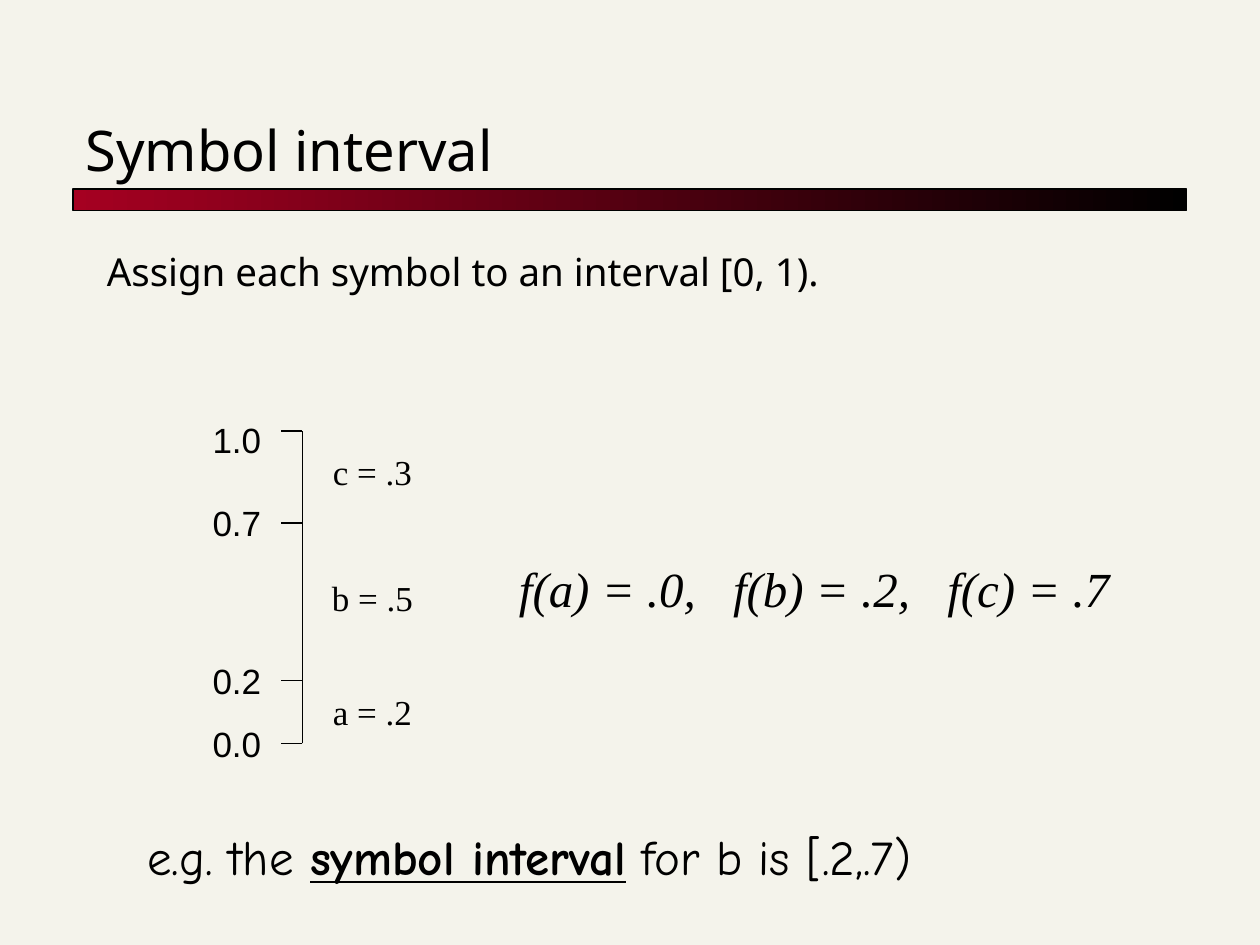
"""Build the symbol interval slide with its probability scale."""
from dataclasses import dataclass

from lxml.etree import SubElement
from pptx import Presentation
from pptx.dml.color import RGBColor
from pptx.enum.shapes import MSO_CONNECTOR, MSO_SHAPE
from pptx.enum.text import MSO_ANCHOR as Anchor, PP_ALIGN as Align
from pptx.oxml.ns import qn
from pptx.slide import Slide
from pptx.text.text import _Paragraph as Paragraph
from pptx.util import Inches, Pt

CREAM = RGBColor(0xF4, 0xF3, 0xEB)
CRIMSON = RGBColor(0xA5, 0x00, 0x21)
BLACK = RGBColor(0, 0, 0)
SANS, SERIF, ARIAL, COMIC = "Noto Sans", "Times New Roman", "Arial", "Comic Neue"
AXIS_X, TICK_X = 2.4, 2.23
LABEL_HEIGHT = 0.5
FORMULA_PITCH = 1.7


@dataclass(frozen=True)
class Bound:
    value: str
    tick_y: float
    label_y: float


@dataclass(frozen=True)
class Symbol:
    text: str
    center_y: float


@dataclass(frozen=True)
class Font:
    name: str
    size: float
    italic: bool = False


BOUNDS = (
    Bound("0.0", 5.9, 5.9),
    Bound("0.2", 5.4, 5.4),
    Bound("0.7", 4.15, 4.15),
    Bound("1.0", 3.42, 3.49),
)
SYMBOLS = (Symbol("a = .2", 5.65), Symbol("b = .5", 4.74), Symbol("c = .3", 3.74))
FORMULAS = ("f(a) = .0,", "f(b) = .2,", "f(c) = .7")


def add_run(paragraph: Paragraph, text: str, font: Font, strong: bool = False) -> None:
    """Append one run; a strong run is bold and underlined."""
    run = paragraph.add_run()
    run.text = text
    run.font.name = font.name
    run.font.size = Pt(font.size)
    run.font.color.rgb = BLACK
    run.font.italic = font.italic
    run.font.bold = strong
    run.font.underline = strong


def add_text_area(slide: Slide, left: float, top: float, width: float, height: float,
                  anchor: Anchor = Anchor.MIDDLE, align: Align = Align.LEFT,
                  wrap: bool = False) -> Paragraph:
    """Add a text box and return its first paragraph."""
    box = slide.shapes.add_textbox(Inches(left), Inches(top), Inches(width), Inches(height))
    frame = box.text_frame
    frame.word_wrap = wrap
    frame.vertical_anchor = anchor
    paragraph = frame.paragraphs[0]
    paragraph.alignment = align
    return paragraph


def add_label(slide: Slide, text: str, left: float, center_y: float, width: float,
              font: Font) -> None:
    """Add a centred label of the scale."""
    label = add_text_area(slide, left, center_y - LABEL_HEIGHT / 2, width, LABEL_HEIGHT,
                          align=Align.CENTER)
    add_run(label, text, font)


def add_rule(slide: Slide, x1: float, y1: float, x2: float, y2: float) -> None:
    """Add a thin black line."""
    rule = slide.shapes.add_connector(
        MSO_CONNECTOR.STRAIGHT, Inches(x1), Inches(y1), Inches(x2), Inches(y2))
    rule.line.color.rgb = BLACK
    rule.line.width = Pt(0.75)
    SubElement(rule._element.spPr, qn("a:effectLst"))


def add_title_bar(slide: Slide) -> None:
    """Add the gradient bar under the title."""
    bar = slide.shapes.add_shape(
        MSO_SHAPE.RECTANGLE, Inches(0.58), Inches(1.5), Inches(8.84), Inches(0.17))
    bar.shadow.inherit = False
    bar.fill.gradient()
    bar.fill.gradient_angle = 0
    for stop, color in zip(bar.fill.gradient_stops, (CRIMSON, BLACK)):
        stop.color.rgb = color
    bar.line.color.rgb = BLACK
    bar.line.width = Pt(0.75)


def add_scale(slide: Slide) -> None:
    """Draw the axis, its bounds and the symbols between them."""
    add_rule(slide, AXIS_X, BOUNDS[0].tick_y, AXIS_X, BOUNDS[-1].tick_y)
    for bound in BOUNDS:
        add_rule(slide, AXIS_X, bound.tick_y, TICK_X, bound.tick_y)
        add_label(slide, bound.value, 1.57, bound.label_y, 0.62, Font(ARIAL, 20))
    for symbol in SYMBOLS:
        add_label(slide, symbol.text, 2.48, symbol.center_y, 0.95, Font(SERIF, 20))


def add_formulas(slide: Slide) -> None:
    """Write the formulas on one line at evenly spaced tab stops."""
    formulas = add_text_area(slide, 4.02, 4.38, 4.89, 0.57)
    tabs = SubElement(formulas._p.get_or_add_pPr(), qn("a:tabLst"))
    for index in range(1, len(FORMULAS)):
        SubElement(tabs, qn("a:tab"), pos=str(Inches(index * FORMULA_PITCH)), algn="l")
    add_run(formulas, "\t".join(FORMULAS), Font(SERIF, 28, italic=True))


def main() -> None:
    """Compose and save the slide."""
    deck = Presentation()
    deck.slide_width, deck.slide_height = Inches(10), Inches(7.5)
    slide = deck.slides.add_slide(deck.slide_layouts[6])
    slide.background.fill.solid()
    slide.background.fill.fore_color.rgb = CREAM

    add_title_bar(slide)
    title = add_text_area(slide, 0.58, 0.42, 8.83, 1.08, Anchor.BOTTOM, wrap=True)
    add_run(title, "Symbol interval", Font(SANS, 32))
    task = add_text_area(slide, 0.75, 1.92, 8.5, 1.75, Anchor.TOP, wrap=True)
    task.space_before = Pt(4.4)
    add_run(task, "Assign each symbol to an interval [0, 1).", Font(SANS, 22))

    add_scale(slide)
    add_formulas(slide)

    example = add_text_area(slide, 1.07, 6.51, 7.3, 0.57)
    comic = Font(COMIC, 28)
    add_run(example, "e.g. the ", comic)
    add_run(example, "symbol interval", comic, strong=True)
    add_run(example, " for b is [.2,.7)", comic)
    deck.save("out.pptx")


if __name__ == "__main__":
    main()
